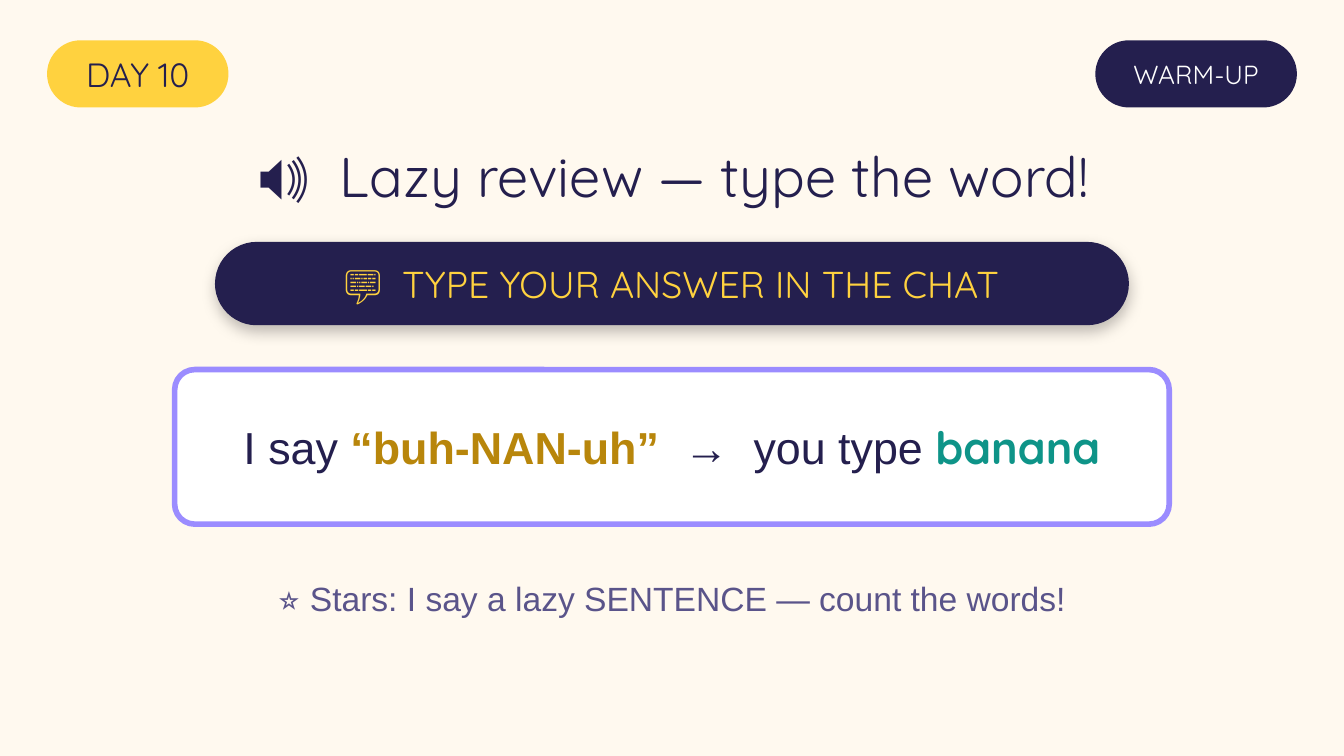
from lxml import etree
from pptx import Presentation
from pptx.dml.color import RGBColor
from pptx.enum.shapes import MSO_SHAPE
from pptx.enum.text import MSO_ANCHOR, PP_ALIGN
from pptx.oxml.ns import qn
from pptx.util import Inches, Pt

ROUND = MSO_SHAPE.ROUNDED_RECTANGLE
MIDDLE = MSO_ANCHOR.MIDDLE
CENTER = PP_ALIGN.CENTER
NAVY, GOLD, WHITE = "241F4E", "FFD23F", "FFFFFF"
HEAD, BODY = "Quicksand", "Arial"


def color(code):
    return RGBColor.from_string(code)


def add_text(box, runs, size, inset):
    """Add a centred line; each run is (text, font, colour, bold)."""
    frame = slide.shapes.add_textbox(*map(Inches, box)).text_frame
    form = {"word_wrap": True, "vertical_anchor": MIDDLE}
    if inset is not None:
        for side in ("left", "top", "right", "bottom"):
            form["margin_" + side] = Inches(inset)
    for key, value in form.items():
        setattr(frame, key, value)
    para = frame.paragraphs[0]
    para.alignment = CENTER
    for text, name, code, bold in runs:
        run = para.add_run()
        run.text = text
        for key, value in {"name": name, "size": Pt(size), "bold": bold}.items():
            setattr(run.font, key, value)
        run.font.color.rgb = color(code)


# Wide 16:9 page
prs = Presentation()
prs.slide_width = Inches(10)
prs.slide_height = Inches(10 * 9 / 16)
slide = prs.slides.add_slide(prs.slide_layouts[6])
slide.background.fill.solid()
slide.background.fill.fore_color.rgb = color("FFF9EF")

# Tags, title, chat banner, example card and stretch task
example = [
    ("I say ", BODY, NAVY, False),
    ("“buh-NAN-uh”", BODY, "B8860B", True),
    ("  →  you type ", BODY, NAVY, False),
    ("banana", HEAD, "0E9488", True),
]
parts = [
    # box, corner, fill, edge, shadow, runs, size, inset
    ((0.35, 0.3, 1.35, 0.5), 0.5, GOLD, None, False,
     [("DAY 10", HEAD, NAVY, False)], 18, 0),
    ((8.15, 0.3, 1.5, 0.5), 0.5, NAVY, None, False,
     [("WARM-UP", HEAD, WHITE, False)], 14, 0),
    ((0, 0.95, 10, 0.7), None, None, None, False,
     [("🔊  Lazy review — type the word!", HEAD, NAVY, False)], 30, None),
    ((1.6, 1.8, 6.8, 0.62), 0.5, NAVY, None, True,
     [("💬  TYPE YOUR ANSWER IN THE CHAT", HEAD, GOLD, False)], 20, 0),
    ((1.3, 2.75, 7.4, 1.15), 0.13, WHITE, "9B8CFF", False, example, 24, None),
    ((0, 4.2, 10, 0.5), None, None, None, False,
     [("⭐ Stars: I say a lazy SENTENCE — count the words!",
       BODY, "5A548A", False)], 18, None),
]
for box, corner, fill, edge, shadow, runs, size, inset in parts:
    if fill:
        panel = slide.shapes.add_shape(ROUND, *map(Inches, box))
        panel.adjustments[0] = corner
        panel.shadow.inherit = False
        panel.fill.solid()
        panel.fill.fore_color.rgb = color(fill)
        if edge:
            panel.line.color.rgb = color(edge)
            panel.line.width = Pt(3)
        else:
            panel.line.fill.background()
    if shadow:
        effects = panel.element.spPr.find(qn("a:effectLst"))
        outer = etree.SubElement(
            effects, qn("a:outerShdw"), blurRad=str(Pt(8)), dist=str(Pt(3)),
            dir="5400000", algn="bl", rotWithShape="0")
        tint = etree.SubElement(outer, qn("a:srgbClr"), val="000000")
        etree.SubElement(tint, qn("a:alpha"), val="25000")
    add_text(box, runs, size, inset)

prs.save("out.pptx")
